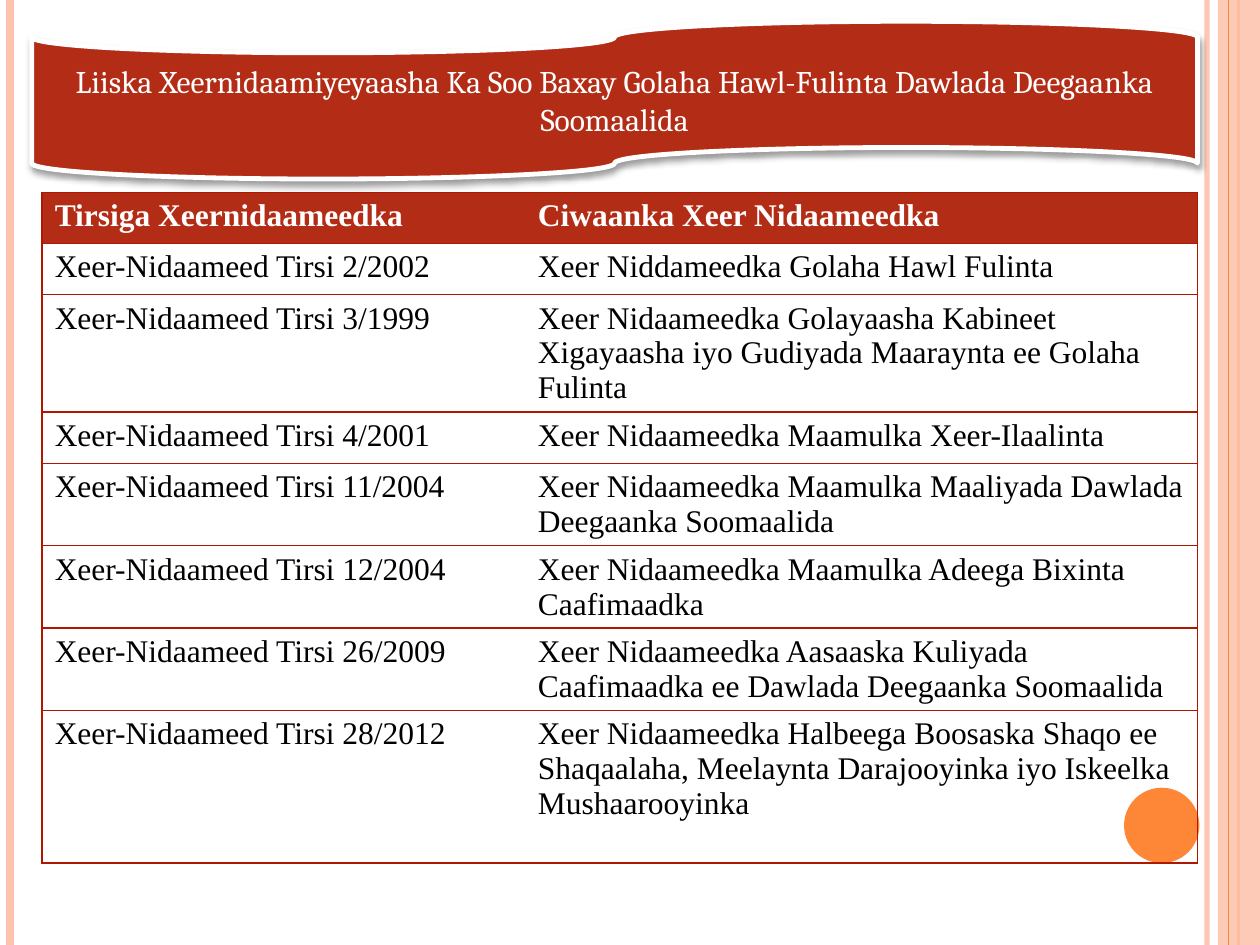
from lxml.etree import SubElement
from pptx import Presentation
from pptx.dml.color import RGBColor
from pptx.enum.shapes import MSO_CONNECTOR, MSO_SHAPE
from pptx.enum.text import MSO_ANCHOR, PP_ALIGN
from pptx.oxml.ns import qn
from pptx.util import Cm, Pt

COLORS = {
    "banner": "B32C16",
    "border": "AC1800",
    "peach": "FEC3AE",
    "orange": "FE8637",
    "white": "FFFFFF",
    "black": "000000",
}
TITLE = ("Liiska Xeernidaamiyeyaasha Ka Soo Baxay Golaha Hawl-Fulinta "
         "Dawlada Deegaanka Soomaalida")
HEADER = ("Tirsiga Xeernidaameedka", "Ciwaanka Xeer Nidaameedka")
# number, title, row height in cm
REGULATIONS = [
    ("2/2002", "Niddameedka Golaha Hawl Fulinta", 1.03),
    ("3/1999", "Nidaameedka Golayaasha Kabineet Xigayaasha iyo Gudiyada "
               "Maaraynta ee Golaha Fulinta", 2.37),
    ("4/2001", "Nidaameedka Maamulka Xeer-Ilaalinta", 1.03),
    ("11/2004", "Nidaameedka Maamulka Maaliyada Dawlada Deegaanka Soomaalida", 1.66),
    ("12/2004", "Nidaameedka Maamulka Adeega Bixinta Caafimaadka", 1.66),
    ("26/2009", "Nidaameedka Aasaaska Kuliyada Caafimaadka ee Dawlada "
                "Deegaanka Soomaalida", 1.66),
    ("28/2012", "Nidaameedka Halbeega Boosaska Shaqo ee Shaqaalaha, Meelaynta "
                "Darajooyinka iyo Iskeelka Mushaarooyinka", 3.07),
]
HEADER_HEIGHT = 1.03
COLUMN_WIDTHS = (9.74, 13.55)
SLIDE_WIDTH, SLIDE_HEIGHT = 25.4, 19.05
# x in cm, color, width in points, opacity in percent
RULES_BEHIND_BAND = [
    (24.33, "peach", 3, 93),
    (0.2, "peach", 4.5, 100),
    (24.97, "orange", 1.5, 100),
]
RULE_ON_BAND = (24.77, "orange", 0.75, 100)


def rgb(name):
    return RGBColor.from_string(COLORS[name])


def set_opacity(fill_parent, percent):
    color = fill_parent.find(".//" + qn("a:srgbClr"))
    SubElement(color, qn("a:alpha"), val=str(percent * 1000))


def write_text(frame, text, font="Times New Roman", size=18, color="black",
               bold=False, align=PP_ALIGN.LEFT):
    frame.word_wrap = True
    paragraph = frame.paragraphs[0]
    paragraph.alignment = align
    run = paragraph.add_run()
    run.text = text
    run.font.name = font
    run.font.size = Pt(size)
    run.font.bold = bold
    run.font.color.rgb = rgb(color)


def add_vertical_rule(slide, x, color, width, opacity):
    rule = slide.shapes.add_connector(
        MSO_CONNECTOR.STRAIGHT, Cm(x), Cm(0), Cm(x), Cm(SLIDE_HEIGHT))
    rule.line.color.rgb = rgb(color)
    rule.line.width = Pt(width)
    properties = rule._element.spPr
    if opacity < 100:
        set_opacity(properties, opacity)
    SubElement(properties, qn("a:effectLst"))


def add_filled_shape(slide, kind, left, top, width, height, color):
    shape = slide.shapes.add_shape(kind, Cm(left), Cm(top), Cm(width), Cm(height))
    shape.shadow.inherit = False
    shape.fill.solid()
    shape.fill.fore_color.rgb = rgb(color)
    shape.line.fill.background()
    return shape


def add_decoration(slide):
    for rule in RULES_BEHIND_BAND:
        add_vertical_rule(slide, *rule)
    band_left = 24.55
    band = add_filled_shape(slide, MSO_SHAPE.RECTANGLE, band_left, 0,
                            SLIDE_WIDTH - band_left, SLIDE_HEIGHT, "peach")
    set_opacity(band._element.spPr, 87)
    add_vertical_rule(slide, *RULE_ON_BAND)
    add_filled_shape(slide, MSO_SHAPE.OVAL, 22.66, 15.88, 1.52, 1.52, "orange")


def add_banner(slide):
    banner = add_filled_shape(slide, MSO_SHAPE.WAVE, 0.64, 0.43, 23.5, 3.18, "banner")
    banner._element.spPr.find(qn("a:prstGeom")).set("prst", "flowChartPunchedTape")
    banner.line.color.rgb = rgb("white")
    banner.line.width = Pt(2.75)
    effects = banner._element.spPr.find(qn("a:effectLst"))
    shadow = SubElement(effects, qn("a:outerShdw"), blurRad=str(Pt(4)),
                        dist=str(Pt(2)), dir="5400000", rotWithShape="0")
    shade = SubElement(shadow, qn("a:srgbClr"), val=COLORS["black"])
    SubElement(shade, qn("a:alpha"), val="40000")
    banner.text_frame.vertical_anchor = MSO_ANCHOR.MIDDLE
    write_text(banner.text_frame, TITLE, font="Cambria", color="white",
               align=PP_ALIGN.CENTER)


def set_borders(cell, visible_sides):
    properties = cell._tc.get_or_add_tcPr()
    for side in "LRTB":
        line = SubElement(properties, qn("a:ln" + side), w=str(Pt(1)))
        if side in visible_sides:
            fill = SubElement(line, qn("a:solidFill"))
            SubElement(fill, qn("a:srgbClr"), val=COLORS["border"])
        else:
            SubElement(line, qn("a:noFill"))


def add_regulation_table(slide):
    rows = [HEADER] + [(f"Xeer-Nidaameed Tirsi {number}", f"Xeer {title}")
                       for number, title, _ in REGULATIONS]
    heights = [HEADER_HEIGHT] + [height for _, _, height in REGULATIONS]
    table = slide.shapes.add_table(
        len(rows), len(COLUMN_WIDTHS), Cm(0.85), Cm(3.88),
        Cm(sum(COLUMN_WIDTHS)), Cm(sum(heights))).table
    table.horz_banding = False
    for column, width in zip(table.columns, COLUMN_WIDTHS):
        column.width = Cm(width)
    for row_index, (texts, height) in enumerate(zip(rows, heights)):
        table.rows[row_index].height = Cm(height)
        is_header = row_index == 0
        for column_index, text in enumerate(texts):
            cell = table.cell(row_index, column_index)
            set_borders(cell, "TB" + "LR"[column_index])
            if is_header:
                cell.fill.solid()
                cell.fill.fore_color.rgb = rgb("banner")
            else:
                cell.fill.background()
            write_text(cell.text_frame, text, bold=is_header,
                       color="white" if is_header else "black")


def main():
    presentation = Presentation()
    presentation.slide_width = Cm(SLIDE_WIDTH)
    presentation.slide_height = Cm(SLIDE_HEIGHT)
    slide = presentation.slides.add_slide(presentation.slide_layouts[6])
    add_decoration(slide)
    add_banner(slide)
    add_regulation_table(slide)
    presentation.save("out.pptx")


if __name__ == "__main__":
    main()
